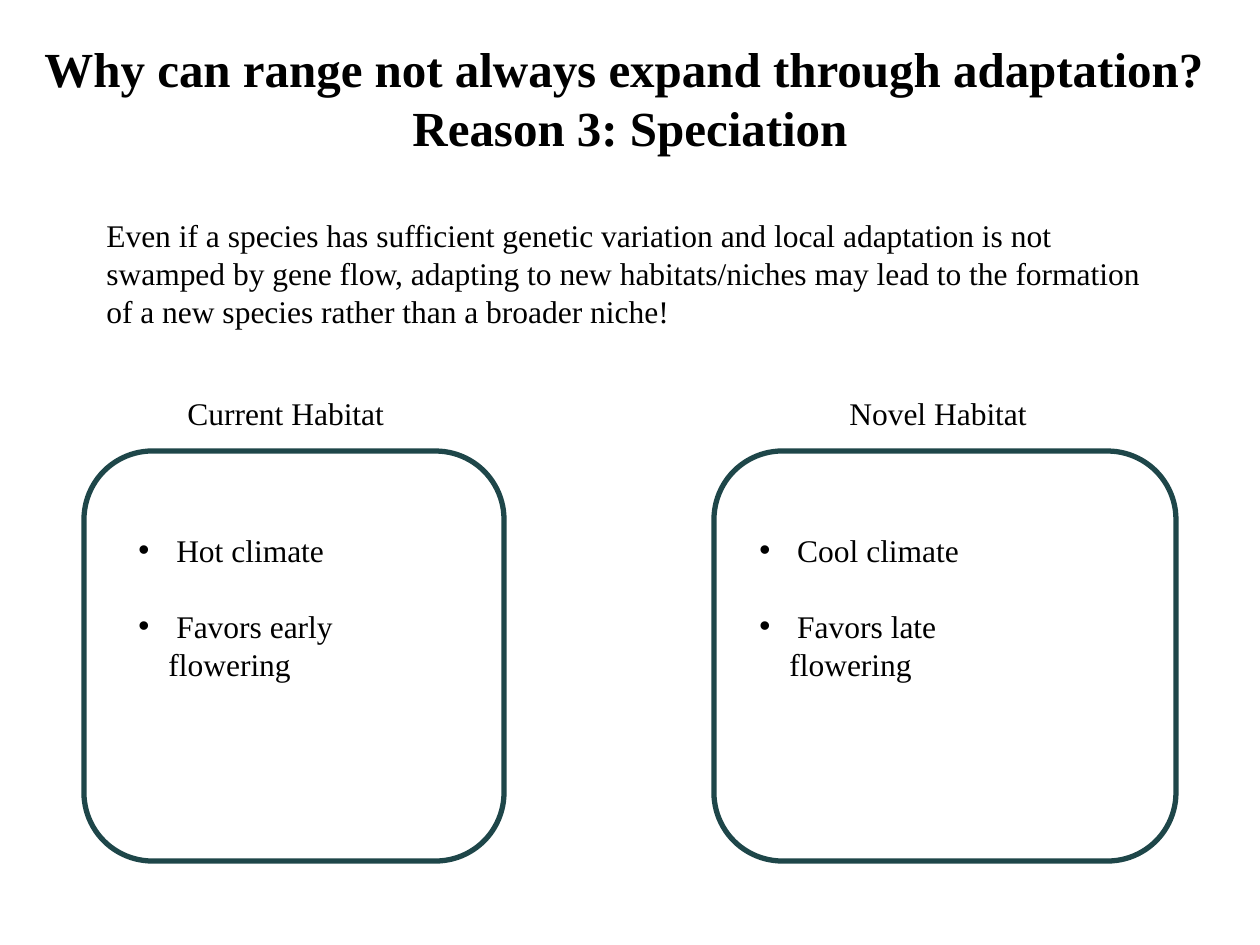
from dataclasses import dataclass

from lxml import etree
from pptx import Presentation
from pptx import util as u
from pptx.dml.color import RGBColor
from pptx.enum import shapes, text
from pptx.oxml.ns import qn

PX_PER_INCH = 126
COLORS = {"ink": "000000", "border": "1E4649"}
FONT = "Times New Roman"
LABEL_TOP, BOX_TOP, BOX_HEIGHT = 388, 451, 410
BULLETS_TOP, BULLETS_HEIGHT, BULLET_INDENT = 525, 127, 30


@dataclass
class TextBlock:
    left: int
    top: int
    width: int
    height: int
    lines: list[str]
    size: int = 18
    bold: bool = False
    align: text.PP_ALIGN = text.PP_ALIGN.LEFT
    wrap: bool = True
    bulleted: bool = False
    gap: float = 0


@dataclass
class Habitat:
    name: str
    traits: list[str]
    box_left: int
    box_width: int
    label_left: int
    label_width: int
    traits_left: int
    traits_width: int


TITLE = TextBlock(
    0, 32, 1260, 131,
    ["Why can range not always expand through adaptation? ", "Reason 3: Speciation"],
    size=28, bold=True, align=text.PP_ALIGN.CENTER,
)
INTRO = TextBlock(
    94, 210, 1071, 127,
    ["Even if a species has sufficient genetic variation and local adaptation is not "
     "swamped by gene flow, adapting to new habitats/niches may lead to the formation "
     "of a new species rather than a broader niche!"],
)
HABITATS = [
    Habitat("Current Habitat", [" Hot climate", " Favors early flowering"],
            84, 420, 175, 224, 126, 334),
    Habitat("Novel Habitat", [" Cool climate", " Favors late flowering"],
            714, 462, 837, 213, 747, 316),
]


def px(length: int) -> u.Emu:
    return u.Emu(round(length * 914400 / PX_PER_INCH))


def color(name: str) -> RGBColor:
    return RGBColor.from_string(COLORS[name])


def set_values(target, values: dict) -> None:
    for name, value in values.items():
        setattr(target, name, value)


def add_bullet(paragraph) -> None:
    properties = paragraph._p.get_or_add_pPr()
    properties.set("marL", str(px(BULLET_INDENT)))
    properties.set("indent", str(-px(BULLET_INDENT)))
    etree.SubElement(properties, qn("a:buFont")).set("typeface", "Arial")
    etree.SubElement(properties, qn("a:buChar")).set("char", "•")


def add_text(slide, block: TextBlock) -> None:
    shape = slide.shapes.add_textbox(
        px(block.left), px(block.top), px(block.width), px(block.height))
    frame = shape.text_frame
    frame.word_wrap = block.wrap
    for index, line in enumerate(block.lines):
        paragraph = frame.paragraphs[0] if index == 0 else frame.add_paragraph()
        paragraph.alignment = block.align
        if index:
            paragraph.space_before = u.Pt(block.gap)
        if block.bulleted:
            add_bullet(paragraph)
        run = paragraph.add_run()
        run.text = line
        set_values(run.font, {"name": FONT, "size": u.Pt(block.size), "bold": block.bold})
        run.font.color.rgb = color("ink")


def add_habitat_box(slide, habitat: Habitat) -> None:
    shape = slide.shapes.add_shape(
        shapes.MSO_SHAPE.ROUNDED_RECTANGLE,
        px(habitat.box_left), px(BOX_TOP), px(habitat.box_width), px(BOX_HEIGHT))
    shape.shadow.inherit = False
    shape.fill.background()
    shape.line.color.rgb = color("border")
    shape.line.width = u.Pt(3)


def main() -> None:
    presentation = Presentation()
    set_values(presentation, {"slide_width": px(1260), "slide_height": px(945)})
    slide = presentation.slides.add_slide(presentation.slide_layouts[6])

    # Title and introduction
    add_text(slide, TITLE)
    add_text(slide, INTRO)

    # Habitats: outline, label and traits
    for habitat in HABITATS:
        add_habitat_box(slide, habitat)
        add_text(slide, TextBlock(
            habitat.label_left, LABEL_TOP, habitat.label_width, 50,
            [habitat.name], wrap=False))
        add_text(slide, TextBlock(
            habitat.traits_left, BULLETS_TOP, habitat.traits_width, BULLETS_HEIGHT,
            habitat.traits, bulleted=True, gap=21.7))

    presentation.save("out.pptx")


if __name__ == "__main__":
    main()
